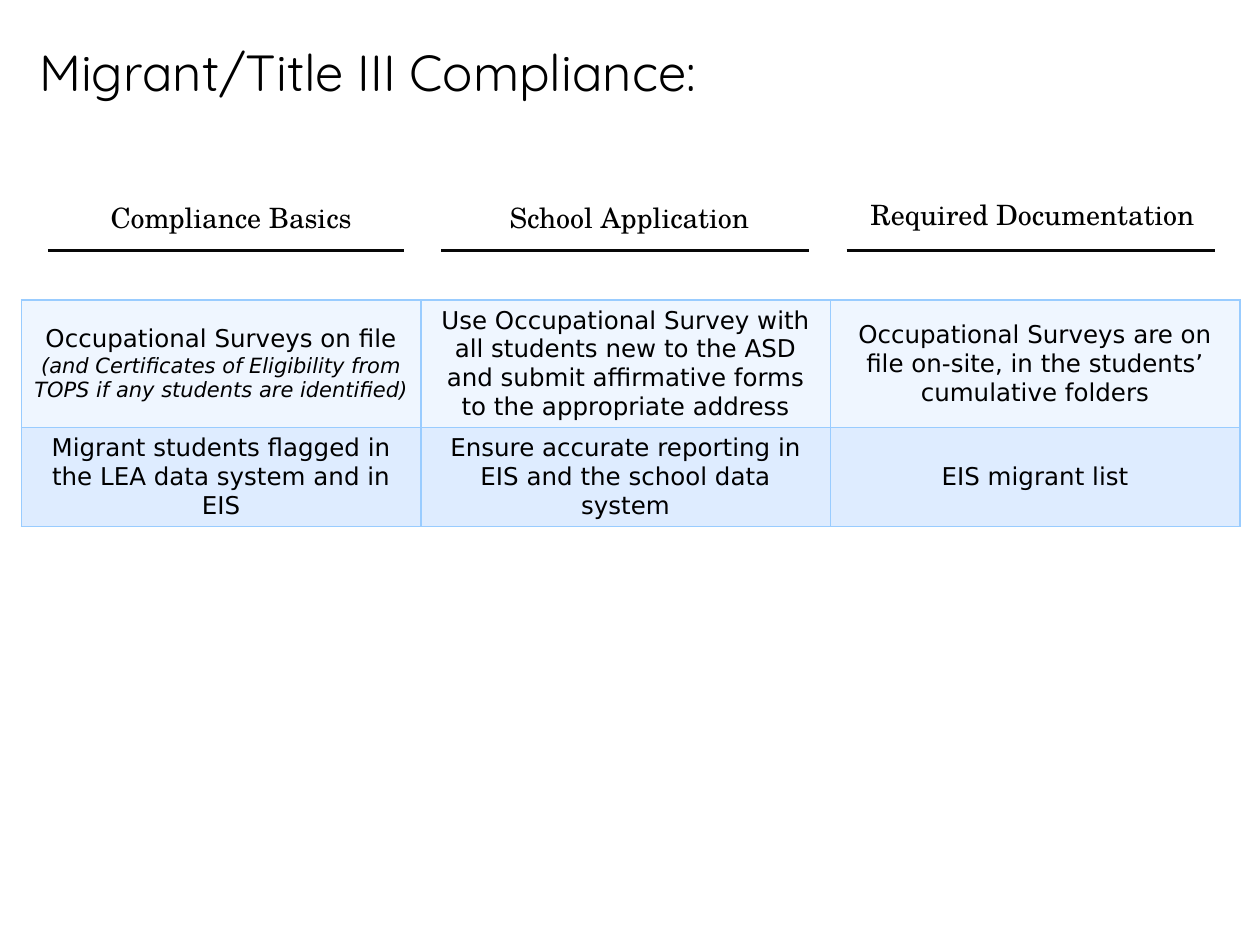
import pptx
import pptx.util
import pptx.dml.color
import pptx.enum.shapes
import pptx.enum.text
import pptx.oxml
import pptx.oxml.ns

WIDTH = pptx.util.Inches(10)
HEIGHT = pptx.util.Inches(7.5)
CENTER = pptx.enum.text.PP_ALIGN.CENTER
LEFT = pptx.enum.text.PP_ALIGN.LEFT
MIDDLE = pptx.enum.text.MSO_ANCHOR.MIDDLE

TITLE = {"name": "Quicksand", "size": pptx.util.Pt(29), "bold": False}
HEADING = {"name": "TeX Gyre Schola", "size": pptx.util.Pt(16)}
BODY = {"name": "DejaVu Sans", "size": pptx.util.Pt(14), "bold": False}
ASIDE = {**BODY, "size": pptx.util.Pt(12), "italic": True}

RULE_Y = 26.53
HEADINGS = [
    ("Compliance Basics", 1.7, 20.53, 33.3, (3.8, 32.1)),
    ("School Application", 28.3, 20.53, 43.3, (35, 64.2)),
    ("Required Documentation", 65.3, 20.27, 33.3, (67.2, 96.4)),
]
COLUMN_SHARES = [31.7, 32.5, 32.5]
ROW_SHARES = [10.53, 8]
ROW_FILLS = ["EFF6FF", "DEECFF"]
ROWS = [
    [
        [
            ("Occupational Surveys on file", BODY),
            ("(and Certificates of Eligibility from TOPS if any students are identified)", ASIDE),
        ],
        [("Use Occupational Survey with all students new to the ASD and submit "
          "affirmative forms to the appropriate address", BODY)],
        [("Occupational Surveys are on file on-site, in the students’ cumulative folders", BODY)],
    ],
    [
        [("Migrant students flagged in the LEA data system and in EIS", BODY)],
        [("Ensure accurate reporting in EIS and the school data system", BODY)],
        [("EIS migrant list", BODY)],
    ],
]


def color(value):
    return pptx.dml.color.RGBColor.from_string(value)


def across(share):
    return round(WIDTH * share / 100)


def down(share):
    return round(HEIGHT * share / 100)


def area(left, top, width, height):
    return across(left), down(top), across(width), down(height)


def write(frame, lines, align):
    frame.word_wrap = True
    for index, (text, style) in enumerate(lines):
        para = frame.paragraphs[0] if index == 0 else frame.add_paragraph()
        para.alignment = align
        span = para.add_run()
        span.text = text
        for key, value in style.items():
            setattr(span.font, key, value)
        span.font.color.rgb = color("000000")


def add_title(slide, text):
    title = slide.shapes.title
    title.left, title.top, title.width, title.height = area(3.1, 1.47, 96.6, 12.13)
    frame = title.text_frame
    insets = {"margin_left": 0, "margin_top": 0, "margin_bottom": 0,
              "margin_right": pptx.util.Inches(0.07), "vertical_anchor": MIDDLE}
    for key, value in insets.items():
        setattr(frame, key, value)
    write(frame, [(text, TITLE)], LEFT)


def add_heading(slide, text, left, top, width):
    box = slide.shapes.add_textbox(*area(left, top, width, 4.93))
    write(box.text_frame, [(text, HEADING)], CENTER)


def add_rule(slide, start, end):
    rule = slide.shapes.add_connector(
        pptx.enum.shapes.MSO_CONNECTOR.STRAIGHT,
        across(start), down(RULE_Y), across(end), down(RULE_Y))
    rule.line.color.rgb = color("080808")
    rule.line.width = pptx.util.Pt(1.5)
    rule._element.spPr.append(pptx.oxml.parse_xml(
        f'<a:effectLst {pptx.oxml.ns.nsdecls("a")}/>'))


def set_borders(cell, value, points):
    properties = cell._tc.get_or_add_tcPr()
    for index, side in enumerate(["lnL", "lnR", "lnT", "lnB"]):
        properties.insert(index, pptx.oxml.parse_xml(
            f'<a:{side} {pptx.oxml.ns.nsdecls("a")} w="{pptx.util.Pt(points)}">'
            f'<a:solidFill><a:srgbClr val="{value}"/></a:solidFill></a:{side}>'))


def add_compliance_table(slide):
    table = slide.shapes.add_table(
        len(ROWS), len(COLUMN_SHARES),
        *area(1.7, 31.73, sum(COLUMN_SHARES), sum(ROW_SHARES))).table
    table.first_row = False
    table.horz_banding = False
    for column, share in zip(table.columns, COLUMN_SHARES):
        column.width = across(share)
    for row, share, fill, contents in zip(table.rows, ROW_SHARES, ROW_FILLS, ROWS):
        row.height = down(share)
        for cell, lines in zip(row.cells, contents):
            cell.vertical_anchor = MIDDLE
            cell.fill.solid()
            cell.fill.fore_color.rgb = color(fill)
            set_borders(cell, "99CCFF", 1)
            write(cell.text_frame, lines, CENTER)


def main():
    deck = pptx.Presentation()
    deck.slide_width, deck.slide_height = WIDTH, HEIGHT
    slide = deck.slides.add_slide(deck.slide_layouts.get_by_name("Title Only"))
    add_title(slide, "Migrant/Title III Compliance:")
    add_compliance_table(slide)
    for text, left, top, width, (start, end) in HEADINGS:
        add_rule(slide, start, end)
        add_heading(slide, text, left, top, width)
    deck.save("out.pptx")


if __name__ == "__main__":
    main()
